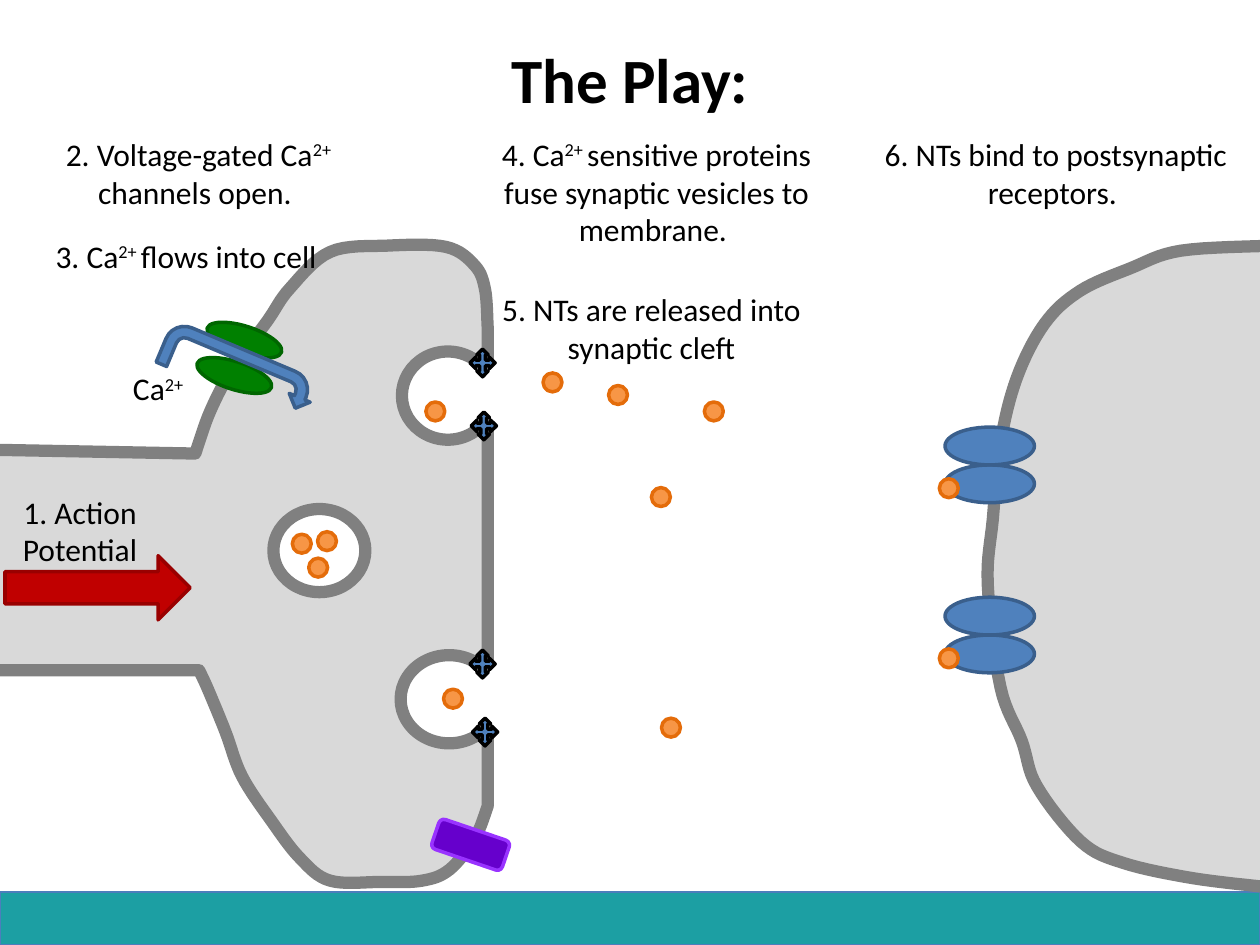
from pptx import Presentation
from pptx.dml.color import RGBColor
from pptx.enum.shapes import MSO_SHAPE
from pptx.enum.text import MSO_ANCHOR, PP_ALIGN
from pptx.util import Inches, Pt

OVAL, RECT, ROUND = MSO_SHAPE.OVAL, MSO_SHAPE.RECTANGLE, MSO_SHAPE.ROUNDED_RECTANGLE
RIGHT_ARROW, U_TURN, QUAD = MSO_SHAPE.RIGHT_ARROW, MSO_SHAPE.U_TURN_ARROW, MSO_SHAPE.QUAD_ARROW
CENTER, TOP, MIDDLE = PP_ALIGN.CENTER, MSO_ANCHOR.TOP, MSO_ANCHOR.MIDDLE

BLACK, WHITE = RGBColor(0, 0, 0), RGBColor(255, 255, 255)
CELL, MEMBRANE = RGBColor(0xD9, 0xD9, 0xD9), RGBColor(0x80, 0x80, 0x80)
TEAL, TEAL_EDGE = RGBColor(0x1C, 0x9F, 0xA3), RGBColor(0x4B, 0x7E, 0xBC)
GREEN, GREEN_EDGE = RGBColor(0, 0x80, 0), RGBColor(0, 0x66, 0)
ORANGE, ORANGE_EDGE = RGBColor(0xF7, 0x96, 0x46), RGBColor(0xE4, 0x6C, 0x0A)
BLUE, BLUE_EDGE = RGBColor(0x4F, 0x81, 0xBD), RGBColor(0x3A, 0x5F, 0x8C)
RED, RED_EDGE = RGBColor(0xC0, 0, 0), RGBColor(0x99, 0, 0)
PURPLE, PURPLE_EDGE = RGBColor(0x66, 0, 0xCC), RGBColor(0x99, 0x33, 0xFF)

COLUMNS = 100
CURVE_STEPS = 8

AXON_TOP, AXON_BOTTOM = (-0.7, 35.7), (-0.8, 53.2)
UPPER_LOBE = [(15.5, 36), (16.7, 32.6), (18.5, 29.2), (21.2, 25.5), (23, 22.9),
              (26.2, 20), (30.7, 19.5), (35.4, 19.6), (37.7, 21.1), (38.5, 23), (38.7, 25.9)]
LOWER_LOBE = [(38.7, 64), (37.7, 66.5), (35.7, 69), (33.5, 69.9), (30.2, 70), (26.2, 69.9),
              (23.8, 68.1), (21.5, 65.1), (19.2, 61.6), (17.9, 58.1), (16.5, 54.7), (15.8, 53.2)]
DENDRITE = [(100.5, 70.4), (94.7, 69.7), (89.2, 68.5), (85.8, 66.8), (82.3, 62.4),
            (81.1, 58.8), (79.4, 54.5), (78.4, 46.4), (78.8, 41.2), (79.4, 35.2),
            (80.7, 30), (82.9, 25.7), (85.7, 23.1), (89.7, 21.3), (93.7, 19.9), (100.8, 19.5)]

VESICLE_CONTENTS = [(23.2, 42.4), (25.2, 42.2), (24.5, 44.3)]
IN_CLEFT = [(43.1, 29.6), (48.3, 30.6), (55.9, 31.9), (51.7, 38.7), (52.5, 57)]
DOCKED_VESICLES = [
    {"ring": (31.9, 27.9, 7.3, 7), "pore": (36.8, 28.8), "transmitter": (33.8, 31.9),
     "proteins": [(37.3, 27.7), (37.4, 32.7)]},
    {"ring": (31.8, 52, 7.7, 7), "pore": (37.1, 52.9), "transmitter": (35.2, 54.7),
     "proteins": [(37.3, 51.6), (37.5, 57)]}]
CALCIUM_CHANNEL_HALVES = [(18.3, 23.9), (17.5, 26.7)]
RECEPTOR_TOPS = [33.9, 47.4]

HEADING_ROW = 10.2
LABELS = [
    ((-0.8, 38.6, 14.3, 7.1), "1. Action Potential"),
    ((9.2, 28.8, 6.7, 4), "Ca^2+"),
    ((3.2, HEADING_ROW, 25.1, 7.1), "2. Voltage-gated Ca^2+ ^channels open. "),
    ((2.5, 18.3, 25.1, 4), "3. Ca^2+ ^flows into cell "),
    ((36.7, HEADING_ROW, 30.8, 10.1),
     "4. Ca^2+ ^sensitive proteins fuse synaptic vesicles to membrane. "),
    ((36.3, 22.5, 30.8, 7.1), "5. NTs are released into synaptic cleft"),
    ((66.7, HEADING_ROW, 34.2, 7.1), "6. NTs bind to postsynaptic receptors. ")]


def smooth(knots):
    """Return points of a Catmull-Rom curve that passes through the knots."""
    padded = [knots[0], *knots, knots[-1]]
    points = []
    for a, b, c, d in zip(padded, padded[1:], padded[2:], padded[3:]):
        for step in range(CURVE_STEPS):
            t = step / CURVE_STEPS
            points.append(tuple(
                k1 + t * (k2 - k0) / 2
                + t ** 2 * (2 * k0 - 5 * k1 + 4 * k2 - k3) / 2
                + t ** 3 * (3 * k1 - k0 - 3 * k2 + k3) / 2
                for k0, k1, k2, k3 in zip(a, b, c, d)))
    return points + [knots[-1]]


class Scene:
    """Draws styled elements on one slide, measured in square grid cells."""

    def __init__(self, prs, font="Calibri"):
        self.s = prs.slides.add_slide(prs.slide_layouts[6])
        self.cell = prs.slide_width // COLUMNS
        self.font = font

    def emu(self, lengths):
        return [round(n * self.cell) for n in lengths]

    def paint(self, sp, fill, edge=None, width=2):
        sp.shadow.inherit = False
        sp.fill.solid()
        sp.fill.fore_color.rgb = fill
        if edge is None:
            sp.line.fill.background()
        else:
            sp.line.color.rgb = edge
            sp.line.width = Pt(width)

    def shape(self, kind, at, fill, edge=None, width=2, turn=0):
        sp = self.s.shapes.add_shape(kind, *self.emu(at))
        sp.rotation = turn
        self.paint(sp, fill, edge, width)

    def cell_body(self, points):
        start, *rest = [self.emu(point) for point in points]
        fb = self.s.shapes.build_freeform(*start)
        fb.add_line_segments(rest, close=True)
        self.paint(fb.convert_to_shape(), CELL, MEMBRANE, 7)

    def vesicle(self, at):
        self.shape(OVAL, at, WHITE, MEMBRANE, 7)

    def transmitter(self, x, y):
        self.shape(OVAL, (x, y, 1.5, 1.5), ORANGE, ORANGE_EDGE)

    def docked_vesicle(self, ring, pore, transmitter, proteins):
        self.vesicle(ring)
        self.shape(RECT, (*pore, 4.1, 4.9), WHITE)
        self.transmitter(*transmitter)
        for corner in proteins:
            self.shape(QUAD, (*corner, 2, 2.2), BLUE, BLACK)

    def receptor(self, top, left=75, half=3):
        for y in (top + half, top):
            self.shape(OVAL, (left, y, 7.1, half), BLUE, BLUE_EDGE)
        self.transmitter(left - 0.45, top + 4.1)

    def calcium_channel(self):
        for corner in CALCIUM_CHANNEL_HALVES:
            self.shape(OVAL, (*corner, 2.2, 6.2), GREEN, GREEN_EDGE, turn=288)
        self.shape(U_TURN, (12.6, 27.7, 12.5, 3.6), BLUE, BLUE_EDGE, turn=22.8)

    def text(self, at, words, size=18, bold=False, anchor=TOP):
        tf = self.s.shapes.add_textbox(*self.emu(at)).text_frame
        tf.word_wrap = True
        tf.vertical_anchor = anchor
        p = tf.paragraphs[0]
        p.alignment = CENTER
        for i, part in enumerate(words.split("^")):
            r = p.add_run()
            r.text = part
            r.font.name, r.font.size, r.font.bold = self.font, Pt(size), bold
            r.font.color.rgb = BLACK
            if i % 2:
                r.font._element.set("baseline", "30000")


def main():
    prs = Presentation()
    prs.slide_width, prs.slide_height = Inches(10), Inches(7.5)
    scene = Scene(prs)

    scene.shape(RECT, (0, 70.8, COLUMNS, 4.2), TEAL, TEAL_EDGE, 0.75)
    scene.text((0, 0, COLUMNS, 12.5), "The Play:", 36, True, MIDDLE)

    scene.cell_body([AXON_TOP, *smooth(UPPER_LOBE), *smooth(LOWER_LOBE), AXON_BOTTOM])
    scene.cell_body(smooth(DENDRITE))

    scene.calcium_channel()
    scene.shape(RIGHT_ARROW, (0.4, 44.1, 14.7, 5.1), RED, RED_EDGE)
    scene.shape(ROUND, (34.4, 65.8, 5.9, 2.5), PURPLE, PURPLE_EDGE, turn=18.8)

    scene.vesicle((21.7, 40.4, 7.3, 6.6))
    for docked in DOCKED_VESICLES:
        scene.docked_vesicle(**docked)
    for top in RECEPTOR_TOPS:
        scene.receptor(top)
    for corner in VESICLE_CONTENTS + IN_CLEFT:
        scene.transmitter(*corner)

    for at, words in LABELS:
        scene.text(at, words)
    prs.save("out.pptx")


if __name__ == "__main__":
    main()
